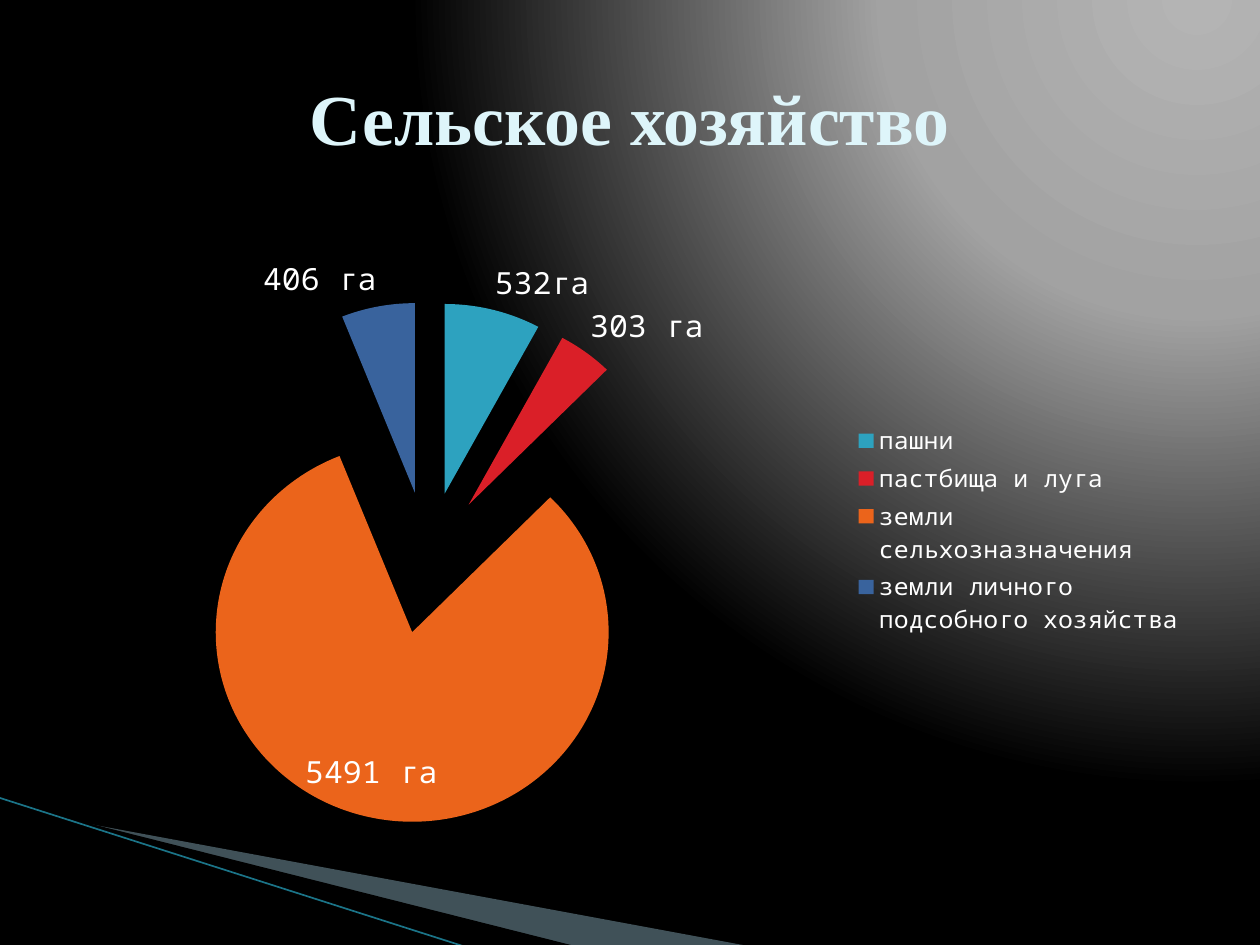
from lxml import etree
from pptx import Presentation
from pptx.chart.data import CategoryChartData
from pptx.dml.color import RGBColor
from pptx.enum import chart as c, text as t
from pptx.oxml import parse_xml
from pptx.oxml.ns import nsdecls, qn
from pptx.util import Inches, Pt

BODY_FONT = "Noto Sans Mono"
WHITE = "FFFFFF"
CHART_WIDTH, CHART_HEIGHT = 8.72, 5.16
LAND = [
    ("пашни", 532, "532га", "2DA2BF"),
    ("пастбища и луга", 303, "303 га", "DA1F28"),
    ("земли сельхозназначения", 5491, "5491 га", "EB641B"),
    ("земли личного подсобного хозяйства", 406, "406 га", "39639D"),
]


def color(value):
    return RGBColor.from_string(value)


def style_font(font, name, size, value, bold=False):
    font.name, font.size, font.bold = name, Pt(size), bold
    font.color.rgb = color(value)


def write_text(frame, words, align=t.PP_ALIGN.CENTER, **style):
    paragraph = frame.paragraphs[0]
    paragraph.alignment = align
    run = paragraph.add_run()
    run.text = words
    style_font(run.font, **style)


def set_background(slide):
    fill = slide.background.fill
    fill.gradient()
    stops = ((0, "B4B4B4"), (40, "A2A2A2"), (100, "000000"))
    stop_xml = "".join(
        f'<a:gs pos="{place * 1000}"><a:srgbClr val="{value}"/></a:gs>'
        for place, value in stops
    )
    gradient = parse_xml(
        f'<a:gradFill {nsdecls("a")} rotWithShape="1"><a:gsLst>{stop_xml}</a:gsLst>'
        '<a:path path="circle"><a:fillToRect l="95000" t="-106000" r="5000" b="206000"/>'
        "</a:path></a:gradFill>"
    )
    old = next(slide.background._cSld.iter(qn("a:gradFill")))
    old.getparent().replace(old, gradient)


def set_frame(shape, left, top, width, height):
    shift_x, shift_y = shape.left - left, shape.top - top
    outline = next(shape._element.iter(qn("a:path")))
    outline.set("w", str(width))
    outline.set("h", str(height))
    for point in outline.iter(qn("a:pt")):
        point.set("x", str(int(point.get("x")) + shift_x))
        point.set("y", str(int(point.get("y")) + shift_y))
    shape.left, shape.top, shape.width, shape.height = left, top, width, height


def add_wedge(slide, frame, points, value, opacity=100):
    corners = [(Inches(x), Inches(y)) for x, y in points]
    builder = slide.shapes.build_freeform(*corners[0])
    builder.add_line_segments(corners[1:], close=True)
    shape = builder.convert_to_shape()
    set_frame(shape, *[Inches(number) for number in frame])
    shape.shadow.inherit = False
    shape.fill.solid()
    shape.fill.fore_color.rgb = color(value)
    shape.line.fill.background()
    if opacity < 100:
        tint = next(shape._element.spPr.iter(qn("a:srgbClr")))
        etree.SubElement(tint, qn("a:alpha"), val=str(opacity * 1000))


def add_line(slide, start, end, value, width):
    ends = [Inches(number) for number in (*start, *end)]
    line = slide.shapes.add_connector(1, *ends)
    line.line.color.rgb = color(value)
    line.line.width = Pt(width)
    etree.SubElement(line._element.spPr, qn("a:effectLst"))


def manual_layout(**parts):
    layout = etree.Element(qn("c:layout"))
    manual = etree.SubElement(layout, qn("c:manualLayout"))
    for tag, value in parts.items():
        etree.SubElement(manual, qn(f"c:{tag}"), val=str(value))
    return layout


def place_plot(chart, left, top, width, height):
    plot_area = chart._chartSpace.chart.plotArea
    for old in plot_area.findall(qn("c:layout")):
        plot_area.remove(old)
    plot_area.insert(0, manual_layout(
        layoutTarget="inner", xMode="edge", yMode="edge",
        x=round(left / CHART_WIDTH, 3), y=round(top / CHART_HEIGHT, 3),
        w=round(width / CHART_WIDTH, 3), h=round(height / CHART_HEIGHT, 3)))


def move_label(series, index, right, down):
    for label in series._element.iter(qn("c:dLbl")):
        number = label.find(qn("c:idx"))
        if number.get("val") == str(index):
            for old in label.findall(qn("c:layout")):
                label.remove(old)
            number.addnext(manual_layout(
                x=round(right / CHART_WIDTH, 3), y=round(down / CHART_HEIGHT, 3)))


def explode(anchor, percent):
    anchor.addnext(etree.Element(qn("c:explosion"), val=str(percent)))


def add_land_chart(slide):
    data = CategoryChartData(number_format="0")
    data.categories = [name for name, *_ in LAND]
    data.add_series("Series 1", [area for _, area, *_ in LAND])
    chart = slide.shapes.add_chart(
        c.XL_CHART_TYPE.PIE, Inches(0.78), Inches(1.72),
        Inches(CHART_WIDTH), Inches(CHART_HEIGHT), data
    ).chart
    chart.has_title = False
    style_font(chart.font, BODY_FONT, 18, WHITE)
    chart.has_legend = True
    chart.legend.position = c.XL_LEGEND_POSITION.RIGHT
    chart.legend.include_in_layout = False
    style_font(chart.legend.font, BODY_FONT, 14.2, WHITE)
    place_plot(chart, 0.24, 0.7, 4.74, 4.21)

    plot = chart.plots[0]
    plot.vary_by_categories = True
    series = plot.series[0]
    series.data_labels.show_value = True
    explode(series._element.find(qn("c:tx")), 35)
    largest = max(area for _, area, *_ in LAND)
    for index, (_, area, label, value) in enumerate(LAND):
        point = series.points[index]
        point.format.fill.solid()
        point.format.fill.fore_color.rgb = color(value)
        point.format.line.fill.background()
        write_text(point.data_label.text_frame, label, name=BODY_FONT, size=18, value=WHITE)
        point.data_label.position = c.XL_LABEL_POSITION.OUTSIDE_END
        if area == largest:
            point.data_label.position = c.XL_LABEL_POSITION.BEST_FIT
            move_label(series, index, 0.52, -0.61)
            explode(series._element.findall(qn("c:dPt"))[index].find(qn("c:idx")), 40)


def add_title(slide, words):
    frame = slide.shapes.add_textbox(Inches(0.5), Inches(0.3), Inches(9), Inches(1.25)).text_frame
    frame.word_wrap = True
    frame.vertical_anchor = t.MSO_ANCHOR.MIDDLE
    write_text(frame, words, name="Times New Roman", size=41, value="DEF5FA", bold=True)


def main():
    presentation = Presentation()
    presentation.slide_width, presentation.slide_height = Inches(10), Inches(7.5)
    slide = presentation.slides.add_slide(presentation.slide_layouts[6])
    set_background(slide)
    add_wedge(slide, (0.78, 5.47, 4.16, 1.58),
              [(0.55, 6.51), (5.95, 7.51), (4.56, 7.51), (0.55, 6.5)], "A0CBDC", 40)
    add_wedge(slide, (-0.06, 6.33, 4.16, 0.92),
              [(0.53, 6.49), (4.57, 7.51), (3.72, 7.52), (0.54, 6.5)], "000000")
    add_line(slide, (-0.01, 6.33), (3.71, 7.52), "1B7488", 0.95)
    add_land_chart(slide)
    add_title(slide, "Сельское хозяйство")
    presentation.save("out.pptx")


if __name__ == "__main__":
    main()
